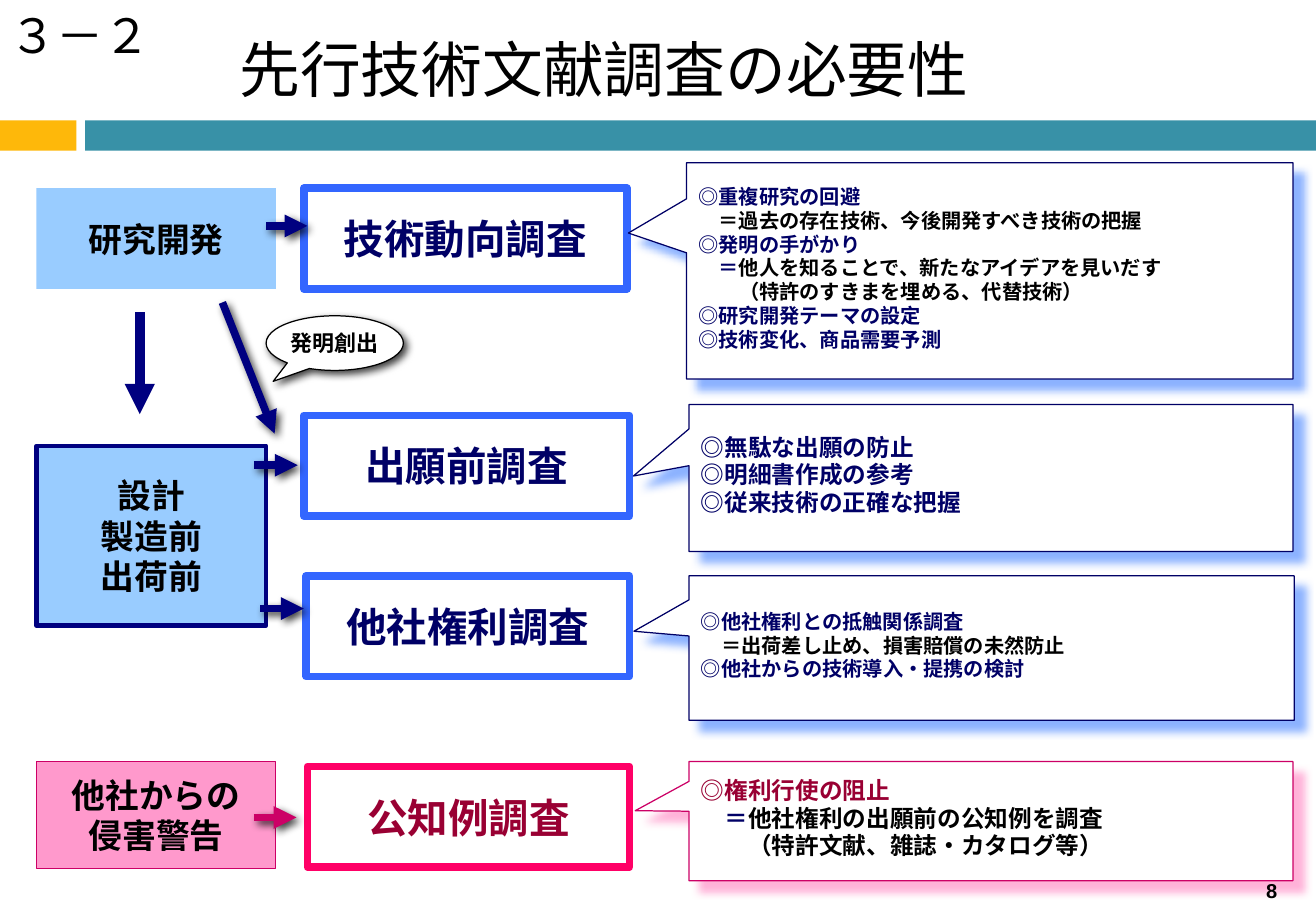
from lxml.etree import SubElement
from pptx import Presentation
from pptx.dml.color import RGBColor
from pptx.enum.shapes import MSO_CONNECTOR, MSO_SHAPE
from pptx.enum.text import MSO_ANCHOR, PP_ALIGN
from pptx.oxml.ns import qn
from pptx.util import Inches, Pt

COLORS = {
    "gold": "FEB80A", "teal": "3891A7", "black": "000000", "white": "FFFFFF",
    "sky": "99CCFF", "blue": "3366FF", "navy": "000080", "ink": "000066",
    "blue shadow": "6699FF", "pink": "FF99CC", "rose": "FF0066",
    "magenta": "CC0066", "wine": "990033",
}
SERIF = "Times New Roman"

# Survey rows: box, box line, text colour, name
SURVEYS = [
    ((2.5, 1.55, 2.66, 0.83), "blue", "ink", "技術動向調査"),
    ((2.5, 3.42, 2.68, 0.83), "blue", "ink", "出願前調査"),
    ((2.52, 4.74, 2.66, 0.83), "blue", "ink", "他社権利調査"),
    ((2.53, 6.31, 2.65, 0.83), "rose", "wine", "公知例調査"),
]

# Stages: box, fill, line, line width, lines of text
STAGES = [
    ((0.3, 1.55, 1.97, 0.83), "sky", None, 0, ["研究開発"]),
    ((0.3, 3.67, 1.89, 1.48), "sky", "navy", 2.5, ["設計", "製造前", "出荷前"]),
    ((0.3, 6.27, 1.97, 0.88), "pink", "magenta", 0.75, ["他社からの", "侵害警告"]),
]

# Purposes: box, pointer, line, shadow, size, lines as (indent in characters, runs)
PURPOSES = [
    ((5.65, 1.34, 4.99, 1.78), (-0.596, -0.175), "ink", "blue shadow", 12, [
        (0, [("◎重複研究の回避", "ink")]),
        (1, [("＝過去の存在技術、今後開発すべき技術の把握", "black")]),
        (0, [("◎発明の手がかり", "ink")]),
        (1, [("＝", "ink"), ("他人を知ることで、新たなアイデアを見いだす", "black")]),
        (2, [("（特許のすきまを埋める、代替技術）", "black")]),
        (0, [("◎研究開発テーマの設定", "ink")]),
        (0, [("◎技術変化、商品需要予測", "ink")]),
    ]),
    ((5.67, 3.33, 4.97, 1.21), (-0.592, -0.013), "ink", "blue shadow", 14, [
        (0, [("◎無駄な出願の防止", "ink")]),
        (0, [("◎明細書作成の参考", "ink")]),
        (0, [("◎従来技術の正確な把握", "ink")]),
    ]),
    ((5.67, 4.74, 4.98, 1.19), (-0.591, -0.116), "ink", "blue shadow", 12, [
        (0, [("◎他社権利との抵触関係調査", "ink")]),
        (1, [("＝出荷差し止め、損害賠償の未然防止", "black")]),
        (0, [("◎他社からの技術導入・提携の検討", "ink")]),
    ]),
    ((5.67, 6.27, 4.97, 0.98), (-0.589, -0.087), "magenta", "pink", 14, [
        (0, [("◎権利行使の阻止", "wine")]),
        (1, [("＝", "ink"), ("他社権利の出願前の公知例を調査", "black")]),
        (2, [("（特許文献、雑誌・カタログ等）", "black")]),
    ]),
]

# Arrows: start, end, colour, width, shadow
ARROWS = [
    ((1.15, 2.57), (1.15, 3.41), "navy", 6, False),
    ((1.83, 2.49), (2.26, 3.57), "navy", 4.5, True),
    ((2.19, 1.86), (2.53, 1.86), "navy", 4.5, True),
    ((2.09, 3.83), (2.45, 3.83), "navy", 4.5, True),
    ((2.14, 5.01), (2.5, 5.01), "navy", 4.5, True),
    ((2.09, 6.73), (2.44, 6.73), "magenta", 4.5, True),
]


def rgb(name):
    return RGBColor.from_string(COLORS[name])


def add_shadow(effects, color, distance):
    shadow = SubElement(effects, qn("a:outerShdw"), blurRad=str(Pt(5)),
                        dist=str(Pt(distance)), dir=str(45 * 60000),
                        algn="tl", rotWithShape="0")
    tint = SubElement(shadow, qn("a:srgbClr"), val=COLORS[color])
    SubElement(tint, qn("a:alpha"), val="75000")


def add_box(slide, kind, box, fill=None, line=None, width=0.75):
    shape = slide.shapes.add_shape(kind, *map(Inches, box))
    if fill:
        shape.fill.solid()
        shape.fill.fore_color.rgb = rgb(fill)
    else:
        shape.fill.background()
    if line:
        shape.line.color.rgb = rgb(line)
        shape.line.width = Pt(width)
    else:
        shape.line.fill.background()
    shape.shadow.inherit = False
    return shape


def add_run(paragraph, text, size, color, font=SERIF, bold=True):
    run = paragraph.add_run()
    run.text = text
    run.font.name = font
    run.font.size = Pt(size)
    run.font.bold = bold
    run.font.color.rgb = rgb(color)


def write_centered(shape, lines, size, color):
    frame = shape.text_frame
    frame.word_wrap = False
    frame.vertical_anchor = MSO_ANCHOR.MIDDLE
    for index, text in enumerate(lines):
        paragraph = frame.add_paragraph() if index else frame.paragraphs[0]
        paragraph.alignment = PP_ALIGN.CENTER
        add_run(paragraph, text, size, color)


def add_label(slide, box, text, size, font, bold=False, alignment=PP_ALIGN.LEFT):
    frame = slide.shapes.add_textbox(*map(Inches, box)).text_frame
    frame.word_wrap = True
    frame.paragraphs[0].alignment = alignment
    add_run(frame.paragraphs[0], text, size, "black", font, bold)


def add_header(slide, box):
    left, top, width, height = box
    # Colour bands along the lower edge
    for start, end, color in ((0, 0.63, "gold"), (0.7, width, "teal")):
        band = (left + start, top + height - 0.25, end - start, 0.25)
        add_box(slide, MSO_SHAPE.RECTANGLE, band, color)
    # Title and section number
    title = slide.shapes.title
    title.left, title.top = Inches(left + 1.87), Inches(top + 0.21)
    title.width, title.height = Inches(7.48), Inches(0.7)
    title.text_frame.vertical_anchor = MSO_ANCHOR.MIDDLE
    paragraph = title.text_frame.paragraphs[0]
    paragraph.alignment = PP_ALIGN.LEFT
    add_run(paragraph, "先行技術文献調査の必要性", 36, "black", "Calibri", False)
    add_label(slide, (left - 0.02, top, 1.97, 0.57), "３－２", 28, "Noto Sans CJK JP")


def add_purpose(slide, box, pointer, line, shadow, size, lines):
    shape = add_box(slide, MSO_SHAPE.RECTANGULAR_CALLOUT, box, "white", line)
    shape.adjustments[0], shape.adjustments[1] = pointer
    add_shadow(shape._element.spPr.find(qn("a:effectLst")), shadow, 8.5)
    frame = shape.text_frame
    frame.word_wrap = True
    frame.vertical_anchor = MSO_ANCHOR.MIDDLE
    for index, (indent, runs) in enumerate(lines):
        paragraph = frame.add_paragraph() if index else frame.paragraphs[0]
        paragraph.alignment = PP_ALIGN.LEFT
        paragraph.line_spacing = 0.7
        if index:
            paragraph.space_before = Pt(size / 3)
        paragraph._p.get_or_add_pPr().set("marL", str(Pt(size * indent)))
        for text, color in runs:
            add_run(paragraph, text, size, color)


def add_arrow(slide, start, end, color, width, shadowed):
    arrow = slide.shapes.add_connector(
        MSO_CONNECTOR.STRAIGHT, *map(Inches, start + end))
    arrow.line.color.rgb = rgb(color)
    arrow.line.width = Pt(width)
    SubElement(arrow.line._get_or_add_ln(), qn("a:tailEnd"), type="triangle")
    effects = SubElement(arrow._element.spPr, qn("a:effectLst"))
    if shadowed:
        add_shadow(effects, "black", 3)


def add_invention_bubble(slide, box):
    bubble = add_box(slide, MSO_SHAPE.OVAL_CALLOUT, box, "white", "black")
    bubble.adjustments[0], bubble.adjustments[1] = -0.448, 0.699
    add_shadow(bubble._element.spPr.find(qn("a:effectLst")), "black", 3)
    write_centered(bubble, ["発明創出"], 13, "black")


def main():
    presentation = Presentation()
    presentation.slide_width = Inches(10.83)
    presentation.slide_height = Inches(7.5)
    slide = presentation.slides.add_slide(presentation.slide_layouts[5])

    add_header(slide, (0, 0, 10.83, 1.24))
    # Stages, surveys and their purposes
    for box, fill, line, width, lines in STAGES:
        stage = add_box(slide, MSO_SHAPE.RECTANGLE, box, fill, line, width)
        write_centered(stage, lines, 20, "black")
    for box, line, color, name in SURVEYS:
        survey = add_box(slide, MSO_SHAPE.RECTANGLE, box, None, line, 4.5)
        write_centered(survey, [name], 24, color)
    for purpose in PURPOSES:
        add_purpose(slide, *purpose)
    # Flow
    for arrow in ARROWS:
        add_arrow(slide, *arrow)
    add_invention_bubble(slide, (2.19, 2.6, 1.13, 0.45))
    # Page number
    add_label(slide, (10.15, 7.18, 0.63, 0.27), "8", 11.9, "Arial", True,
              PP_ALIGN.CENTER)
    presentation.save("out.pptx")


if __name__ == "__main__":
    main()
